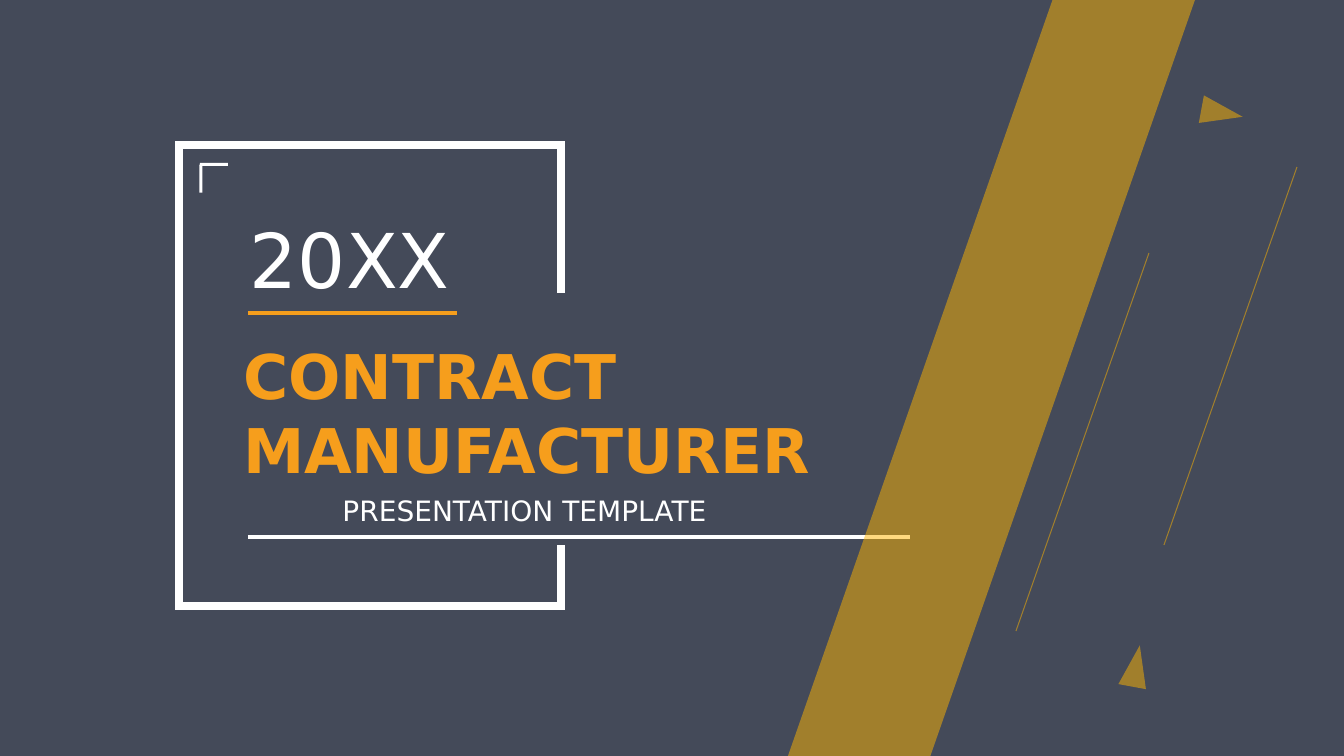
from lxml import etree
from pptx import Presentation
from pptx import util as u
from pptx.dml.color import RGBColor
from pptx.enum import shapes, text
from pptx.oxml.ns import qn

PX = 914400 / 100.8
FONT = "DejaVu Sans"
COLOURS = {"navy": "161D30", "orange": "F69E1C", "gold": "FFB500", "white": "FFFFFF"}


def px(*lengths):
    return [u.Emu(round(length * PX)) for length in lengths]


def paint(shape, fill=None, line=None, width=0, opacity=100):
    """Fill or outline a shape, without shadow, at an opacity in percent."""
    properties = shape._element.spPr
    if fill:
        shape.fill.solid()
        shape.fill.fore_color.rgb = RGBColor.from_string(COLOURS[fill])
    if line:
        shape.line.color.rgb = RGBColor.from_string(COLOURS[line])
        shape.line.width = u.Pt(width)
    else:
        shape.line.fill.background()
    if opacity < 100:
        for colour in properties.iter(qn("a:srgbClr")):
            etree.SubElement(colour, qn("a:alpha"), val=str(opacity * 1000))
    etree.SubElement(properties, qn("a:effectLst"))


deck = Presentation()
deck.slide_width, deck.slide_height = px(1344, 756)
page = deck.slides.add_slide(deck.slide_layouts[5])
title = page.shapes.title

# Backdrop, behind the title
backdrop = page.shapes.add_shape(shapes.MSO_SHAPE.RECTANGLE, *px(0, 0, 1344, 756))
paint(backdrop, fill="navy", opacity=80)
title._element.addprevious(backdrop._element)

# Title, subtitle and year
title.left, title.top, title.width, title.height = px(233, 333, 719, 159)
subtitle = page.shapes.add_textbox(*px(238, 489, 573, 44))
year = page.shapes.add_textbox(*px(240, 208, 257, 102))
for box, words, size, colour, bold, align in [
    (title, "CONTRACT\nMANUFACTURER", 44, "orange", True, text.PP_ALIGN.LEFT),
    (subtitle, "PRESENTATION TEMPLATE", 20, "white", False, text.PP_ALIGN.CENTER),
    (year, "20XX", 54, "white", False, text.PP_ALIGN.LEFT),
]:
    frame = box.text_frame
    frame.text = words
    frame.word_wrap = True
    frame.auto_size = text.MSO_AUTO_SIZE.NONE
    frame.vertical_anchor = text.MSO_ANCHOR.TOP
    for para in frame.paragraphs:
        para.alignment = align
        for span in para.runs:
            span.font.name, span.font.size, span.font.bold = FONT, u.Pt(size), bold
            span.font.color.rgb = RGBColor.from_string(COLOURS[colour])

# Open frame with square corners
builder = page.shapes.build_freeform(561, 293, scale=PX)
builder.add_line_segments(
    [(561, 145), (179, 145), (179, 606), (561, 606), (561, 545)], close=False)
open_frame = builder.convert_to_shape()
open_frame.fill.background()
paint(open_frame, line="white", width=6)
etree.SubElement(open_frame.line._get_or_add_ln(), qn("a:miter"), lim="800000")

# Rules under the year and subtitle, then the thin slanted lines
straight_lines = [
    ((248, 313, 457, 313), "orange", 2.25, 100),
    ((248, 537, 910, 537), "white", 2.25, 100),
    ((1149, 253, 1016, 631), "gold", 0.75, 50),
    ((1297, 167, 1164, 545), "gold", 0.75, 50),
]
for ends, colour, width, opacity in straight_lines:
    rule = page.shapes.add_connector(shapes.MSO_CONNECTOR.STRAIGHT, *px(*ends))
    paint(rule, line=colour, width=width, opacity=opacity)

# Corner mark, slanted band and triangles
solids = [
    ("RECTANGLE", (200, 163, 28, 3), 0, "white", 100),
    ("RECTANGLE", (187, 177, 28, 3), 270, "white", 100),
    ("PARALLELOGRAM", (788, 0, 407, 756), 0, "gold", 50),
    ("ISOSCELES_TRIANGLE", (1208, 92, 28, 42), 100.5, "gold", 50),
    ("ISOSCELES_TRIANGLE", (1122, 645, 28, 42), 10.5, "gold", 50),
]
for kind, place, turn, colour, opacity in solids:
    solid = page.shapes.add_shape(shapes.MSO_SHAPE[kind], *px(*place))
    solid.rotation = turn
    if kind == "PARALLELOGRAM":
        solid.adjustments[0] = 0.65
    paint(solid, fill=colour, opacity=opacity)

deck.save("out.pptx")
